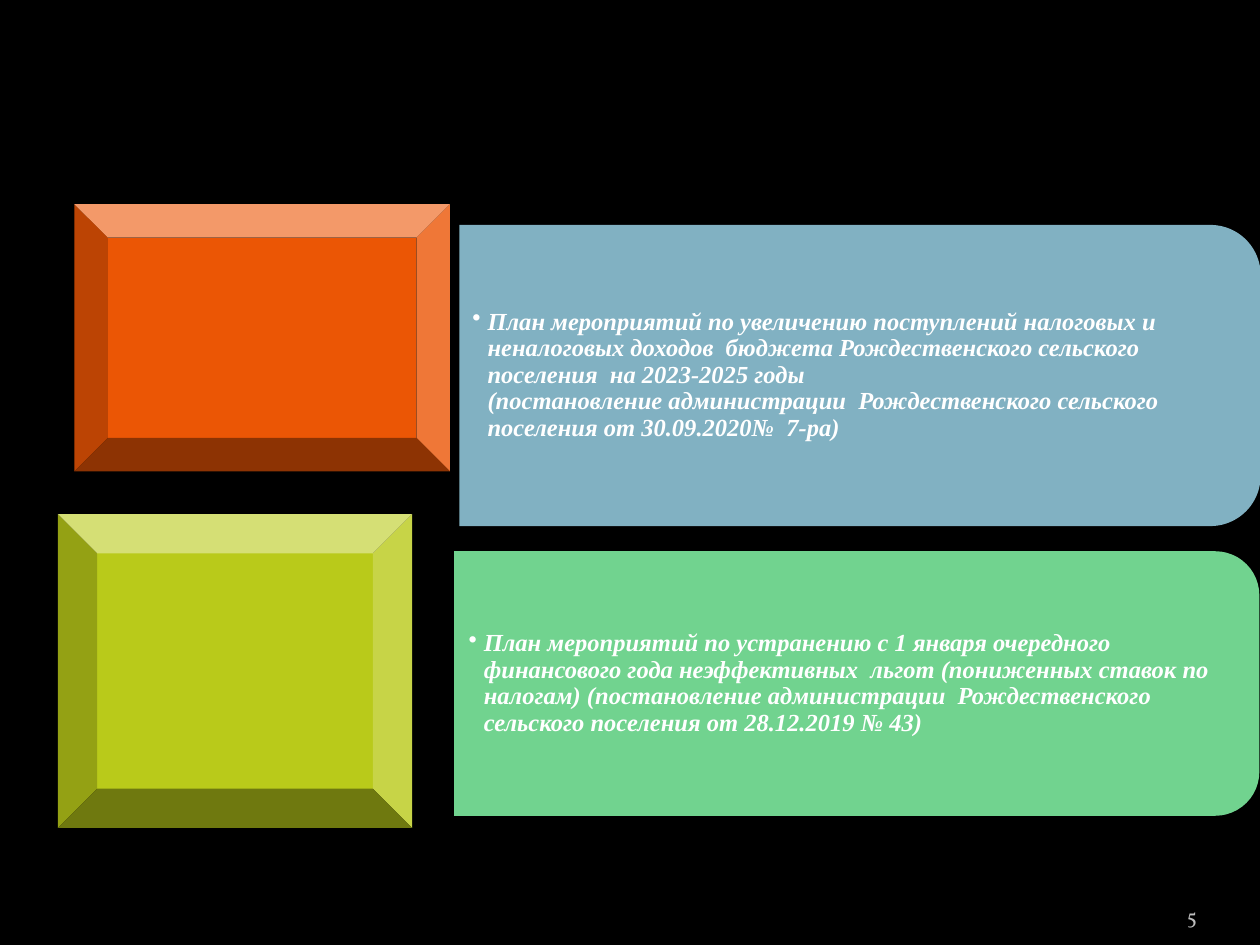
from lxml.etree import SubElement
from pptx import Presentation
from pptx.dml.color import RGBColor
from pptx.enum.shapes import MSO_SHAPE as Preset
from pptx.enum.text import MSO_ANCHOR as Anchor, PP_ALIGN as Align
from pptx.oxml.ns import qn
from pptx.util import Inches, Pt

# Bevel and panel boxes are given before their quarter turn.
PLANS = [
    {
        "bevel": (1.02, 1.19, 2.12, 2.98), "bevel_color": "EB5605",
        "panel": (5.63, -0.2, 2.39, 6.36), "panel_color": "90C5D8",
        "label": (3.64, 1.9, 6.24, 2.16),
        "text": "План мероприятий по увеличению поступлений налоговых и "
                "неналоговых доходов  бюджета Рождественского сельского "
                "поселения  на 2023-2025 годы \v"
                "(постановление администрации  Рождественского сельского "
                "поселения от 30.09.2020№  7-ра)",
    },
    {
        "bevel": (0.62, 3.92, 2.49, 2.81), "bevel_color": "B9CA1A",
        "panel": (5.75, 2.23, 2.1, 6.39), "panel_color": "7EEA9F",
        "label": (3.61, 4.48, 6.29, 1.89),
        "text": "План мероприятий по устранению с 1 января очередного "
                "финансового года неэффективных  льгот (пониженных ставок по "
                "налогам) (постановление администрации  Рождественского "
                "сельского поселения от 28.12.2019 № 43)",
    },
]


def paint(fill, color):
    fill.solid()
    fill.fore_color.rgb = RGBColor.from_string(color)


def add_turned_shape(page, preset, place, color, opacity=100):
    """Add a borderless shape turned by 90 degrees; opacity is in percent."""
    shape = page.shapes.add_shape(preset, *map(Inches, place))
    shape.rotation = 90
    shape.shadow.inherit = False
    shape.line.fill.background()
    paint(shape.fill, color)
    if opacity < 100:
        color_node = shape.fill._xPr.find(qn("a:solidFill"))[0]
        SubElement(color_node, qn("a:alpha")).set("val", str(opacity * 1000))


def add_text(page, place, text, insets, anchor, font_name, size, color):
    """Add a wrapped one-paragraph text box and return its paragraph."""
    frame = page.shapes.add_textbox(*map(Inches, place)).text_frame
    frame.word_wrap = True
    frame.vertical_anchor = anchor
    (frame.margin_left, frame.margin_top,
     frame.margin_right, frame.margin_bottom) = map(Inches, insets)
    para = frame.paragraphs[0]
    para.text = text
    for span in para.runs:
        span.font.name = font_name
        span.font.size = Pt(size)
        paint(span.font.fill, color)
    return para


def add_bullet(para, indent):
    props = para._p.get_or_add_pPr()
    props.set("marL", str(Inches(indent)))
    props.set("indent", str(-Inches(indent)))
    SubElement(props, qn("a:buChar")).set("char", "•")


def add_plan(page, plan):
    add_turned_shape(page, Preset.BEVEL, plan["bevel"], plan["bevel_color"])
    add_turned_shape(page, Preset.ROUND_2_SAME_RECTANGLE, plan["panel"],
                     plan["panel_color"], opacity=90)
    para = add_text(page, plan["label"], plan["text"], (0.11, 0.01, 0.01, 0.01),
                    Anchor.MIDDLE, "Times New Roman", 14, "FFFFFF")
    para.line_spacing = 0.9
    add_bullet(para, 0.12)
    for span in para.runs:
        span.font.bold = True
        span.font.italic = True


def main():
    deck = Presentation()
    deck.slide_width, deck.slide_height = Inches(10), Inches(7.5)
    page = deck.slides.add_slide(deck.slide_layouts[6])
    paint(page.background.fill, "000000")
    number = add_text(page, (8.67, 7.02, 0.83, 0.4), "5", (0, 0.05, 0, 0.05),
                      Anchor.BOTTOM, "Vollkorn", 12, "BDBDBD")
    number.alignment = Align.RIGHT
    for plan in PLANS:
        add_plan(page, plan)
    deck.save("out.pptx")


if __name__ == "__main__":
    main()
